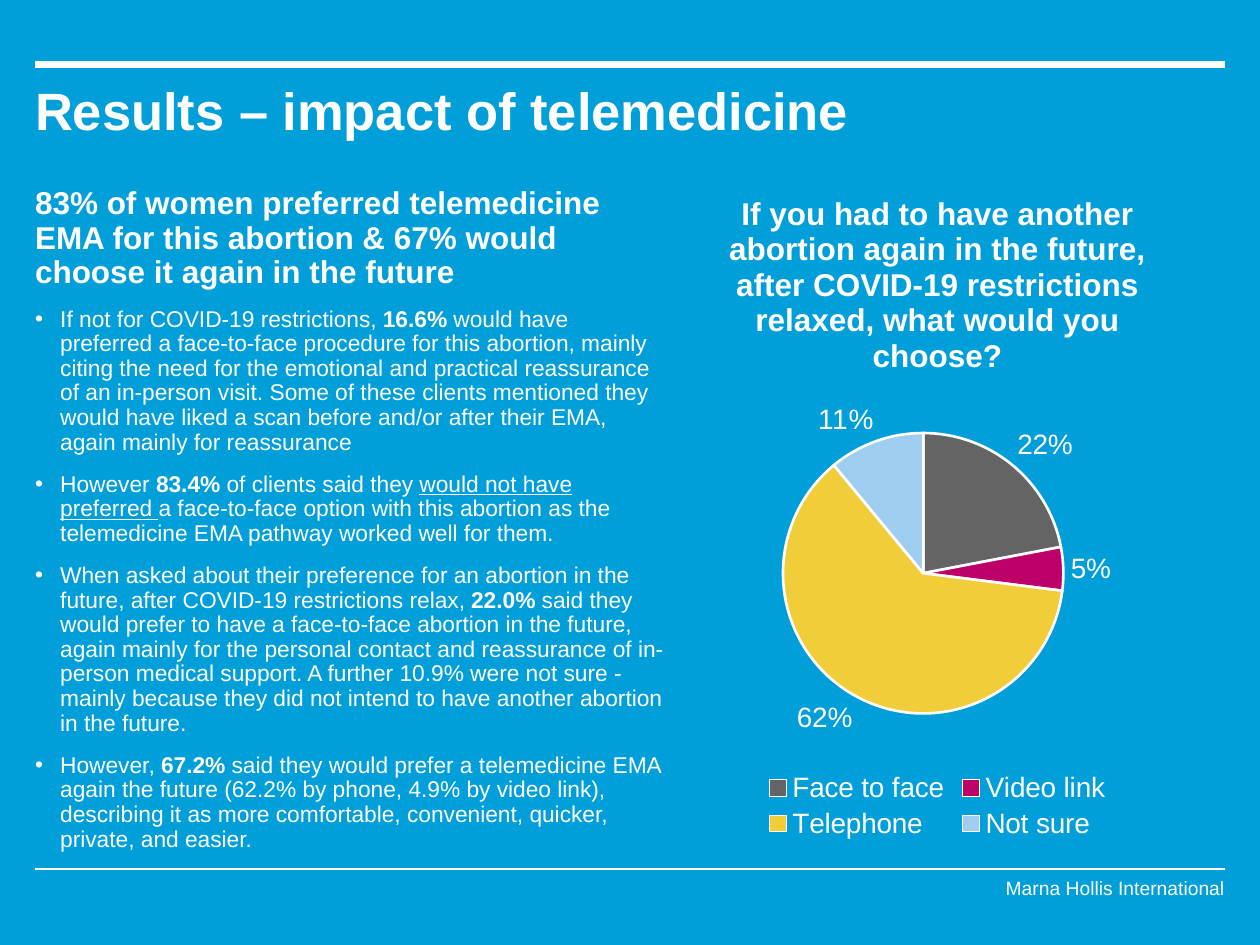
from lxml.etree import SubElement
from pptx import Presentation
from pptx.chart.data import CategoryChartData
from pptx.dml.color import RGBColor
from pptx.enum.chart import XL_CHART_TYPE, XL_LABEL_POSITION, XL_LEGEND_POSITION
from pptx.enum.text import MSO_ANCHOR, MSO_AUTO_SIZE, PP_ALIGN
from pptx.oxml import parse_xml
from pptx.oxml.ns import nsdecls, qn
from pptx.util import Inches, Pt

WHITE = "FFFFFF"
LEFT, WIDTH = 0.0278, 0.9444
HEADING = ("83% of women preferred telemedicine EMA for this abortion & "
           "67% would choose it again in the future")
FINDINGS = [
    [("If not for COVID-19 restrictions, ", ""), ("16.6% ", "bold"),
     ("would have preferred a face-to-face procedure for this abortion, mainly citing the need "
      "for the emotional and practical reassurance of an in-person visit. Some of these clients "
      "mentioned they would have liked a scan before and/or after their EMA, again mainly for "
      "reassurance", "")],
    [("However ", ""), ("83.4% ", "bold"), ("of clients said they ", ""),
     ("would not have preferred ", "underline"),
     ("a face-to-face option with this abortion as the telemedicine EMA pathway worked well "
      "for them.", "")],
    [("When asked about their preference for an abortion in the future, after COVID-19 "
      "restrictions relax, ", ""), ("22.0%", "bold"),
     (" said they would prefer to have a face-to-face abortion in the future, again mainly for "
      "the personal contact and reassurance of in-person medical support. A further 10.9% were "
      "not sure - mainly because they did not intend to have another abortion in the future.", "")],
    [("However, ", ""), ("67.2%", "bold"),
     (" said they would prefer a telemedicine EMA again the future (62.2% by phone, 4.9% by "
      "video link), describing it as more comfortable, convenient, quicker, private, and "
      "easier.", "")],
]
QUESTION = ("If you had to have another abortion again in the future, after COVID-19 "
            "restrictions relaxed, what would you choose?")
CHOICES = [("Face to face", 22, "636463"), ("Video link", 5, "BE0069"),
           ("Telephone", 62, "F2CD3A"), ("Not sure", 11, "9ECDF0")]


def color(value):
    """Return the colour for a hex string."""
    return RGBColor.from_string(value)


class Page:
    """Hold the style and the current slide, placing elements by shares of its size."""

    def __init__(self, deck, background, font="Arial"):
        """Add a slide with a plain background."""
        self.deck, self.font = deck, font
        self.slide = deck.slides.add_slide(deck.slide_layouts[1])
        fill = self.slide.background.fill
        fill.solid()
        fill.fore_color.rgb = color(background)

    def area(self, left, top, width, height):
        """Turn shares of the slide into lengths."""
        across, down = self.deck.slide_width, self.deck.slide_height
        return int(left * across), int(top * down), int(width * across), int(height * down)

    def style(self, font, size, bold=False):
        """Apply the shared text style to a font."""
        font.name, font.size, font.bold = self.font, Pt(size), bold
        font.color.rgb = color(WHITE)

    def frame(self, box, area, inset=0, anchor=MSO_ANCHOR.TOP):
        """Place a text shape and return its prepared frame."""
        box.left, box.top, box.width, box.height = self.area(*area)
        frame = box.text_frame
        frame.word_wrap, frame.auto_size = True, MSO_AUTO_SIZE.NONE
        frame.margin_left = frame.margin_right = 0
        frame.margin_top, frame.margin_bottom = Inches(inset), Inches(0.05)
        frame.vertical_anchor = anchor
        return frame

    def rule(self, top, weight):
        """Draw a full-width horizontal rule."""
        left, y, width, _ = self.area(LEFT, top, WIDTH, 0)
        line = self.slide.shapes.add_connector(1, left, y, left + width, y)
        line.line.color.rgb, line.line.width = color(WHITE), Pt(weight)
        SubElement(line._element.spPr, qn("a:effectLst"))

    def title(self, text, area):
        """Fill the title placeholder."""
        frame = self.frame(self.slide.shapes.title, area)
        frame.text = text
        paragraph = frame.paragraphs[0]
        paragraph.alignment, paragraph.line_spacing = PP_ALIGN.LEFT, 0.9
        self.style(paragraph.runs[0].font, 30, True)

    def footer(self, text, area):
        """Add a right-aligned footer."""
        box = self.slide.shapes.add_textbox(*self.area(*area))
        frame = self.frame(box, area, 0.05, MSO_ANCHOR.MIDDLE)
        frame.text = text
        frame.paragraphs[0].alignment = PP_ALIGN.RIGHT
        self.style(frame.paragraphs[0].runs[0].font, 11)

    def body(self, heading, findings, area):
        """Fill the body placeholder with a heading and bulleted findings."""
        frame = self.frame(self.slide.placeholders[1], area)
        frame.text = heading
        paragraph = frame.paragraphs[0]
        self.style(paragraph.runs[0].font, 18, True)
        self.bullet(paragraph, None)
        for finding in findings:
            paragraph = frame.add_paragraph()
            self.bullet(paragraph, "•")
            for text, emphasis in finding:
                span = paragraph.add_run()
                span.text = text
                self.style(span.font, 13, emphasis == "bold")
                span.font.underline = emphasis == "underline"

    def bullet(self, paragraph, mark):
        """Set the spacing, indent and bullet of a paragraph."""
        paragraph.line_spacing, paragraph.space_before = 0.9, Pt(10)
        properties = paragraph._p.get_or_add_pPr()
        indent = Inches(0.2) if mark else 0
        properties.set("marL", str(indent))
        properties.set("indent", str(-indent))
        if mark:
            SubElement(SubElement(properties, qn("a:buClr")), qn("a:srgbClr"), val=WHITE)
            SubElement(properties, qn("a:buChar"), char=mark)
        else:
            SubElement(properties, qn("a:buNone"))

    def pie(self, question, choices, area, plot):
        """Add a pie chart with a title, percent labels and a legend."""
        names, values, fills = zip(*choices)
        data = CategoryChartData()
        data.categories = names
        data.add_series("Series 1", values)
        chart = self.slide.shapes.add_chart(XL_CHART_TYPE.PIE, *self.area(*area), data).chart
        self.style(chart.font, 16)
        chart.has_title = True
        chart.chart_title.include_in_layout = False
        chart.chart_title.text_frame.text = question
        self.style(chart.chart_title.text_frame.paragraphs[0].runs[0].font, 18, True)
        chart.has_legend = True
        chart.legend.position = XL_LEGEND_POSITION.BOTTOM
        chart.legend.include_in_layout = False
        pie = chart.plots[0]
        pie.vary_by_categories = True
        pie.has_data_labels = True
        labels = pie.data_labels
        labels.show_percentage, labels.show_value = True, False
        labels.number_format, labels.number_format_is_linked = "0%", False
        labels.position = XL_LABEL_POSITION.OUTSIDE_END
        self.style(labels.font, 16)
        for index, fill in enumerate(fills):
            slice_format = pie.series[0].points[index].format
            slice_format.fill.solid()
            slice_format.fill.fore_color.rgb = color(fill)
            slice_format.line.color.rgb, slice_format.line.width = color(WHITE), Pt(1.5)
        self.fix_plot(chart, plot)

    def fix_plot(self, chart, plot):
        """Pin the inner plot area to shares of the chart."""
        area = chart._chartSpace.chart.plotArea
        for old in area.findall(qn("c:layout")):
            area.remove(old)
        sizes = "".join(f'<c:{key} val="{share}"/>' for key, share in zip("xywh", plot))
        area.insert(0, parse_xml(
            f'<c:layout {nsdecls("c")}><c:manualLayout><c:layoutTarget val="inner"/>'
            f'<c:xMode val="edge"/><c:yMode val="edge"/>{sizes}</c:manualLayout></c:layout>'))


def main():
    """Build and save the deck."""
    deck = Presentation()
    deck.slide_width, deck.slide_height = Inches(10), Inches(7.5)
    page = Page(deck, "009FDA")
    page.rule(0.068, 4)
    page.rule(0.9195, 1)
    page.footer("Marna Hollis International", (0.493, 0.922, 0.479, 0.036))
    page.title("Results – impact of telemedicine", (LEFT, 0.09, 0.945, 0.109))
    page.body(HEADING, FINDINGS, (LEFT, 0.1987, 0.5, 0.711))
    page.pie(QUESTION, CHOICES, (0.5, 0.1765, 0.488, 0.717), (0.247, 0.393, 0.46, 0.414))
    deck.save("out.pptx")


if __name__ == "__main__":
    main()
